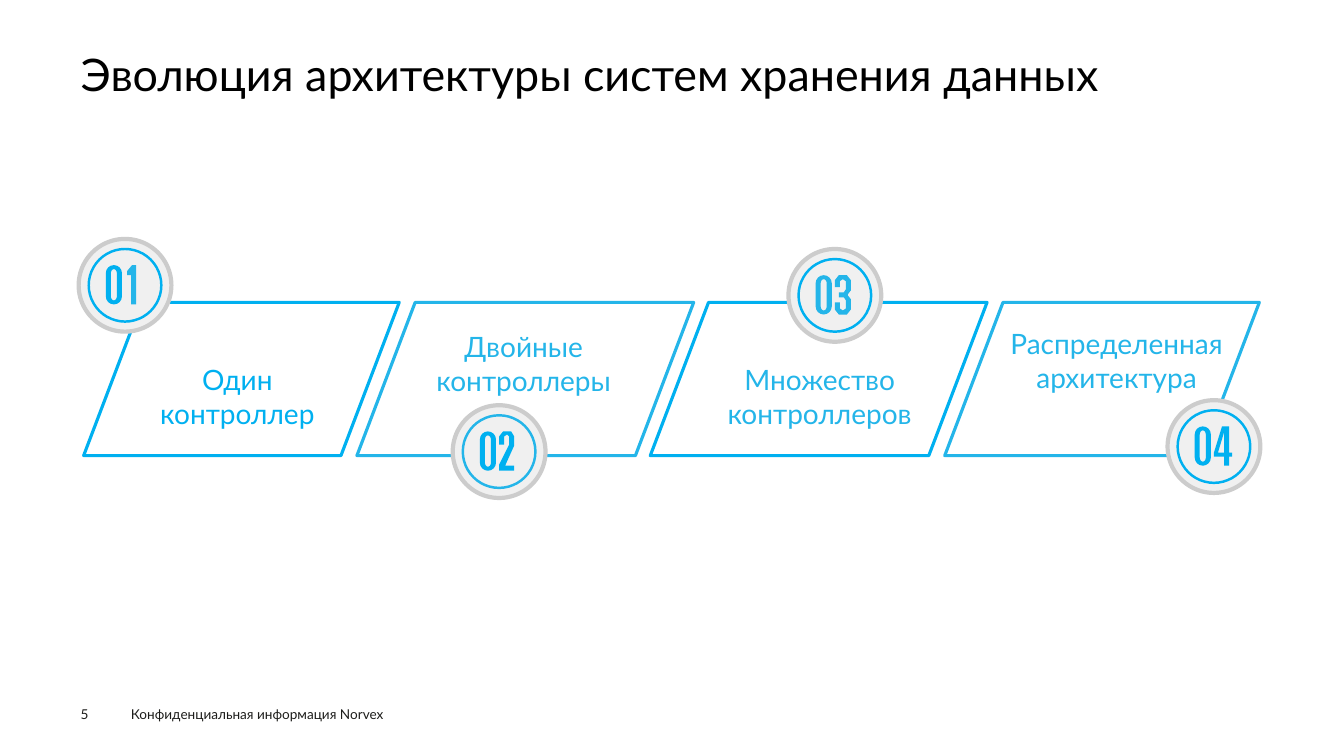
from dataclasses import dataclass
from math import cos, pi, sin
from pptx import Presentation
from pptx.dml.color import RGBColor as RGB
from pptx.enum.shapes import MSO_SHAPE as Kind
from pptx.enum.text import MSO_ANCHOR as Anchor, PP_ALIGN as Align
from pptx.util import Pt

PX = 9144  # EMU in one px, 100 px to the inch
FINE = 20  # steps in one px for digit outlines
TALL = 39  # height of a digit


@dataclass(frozen=True)
class Theme:
    font: str = "Lato"
    blue: str = "00B0F0"
    sky: str = "24B5E9"
    disc: str = "F0F0F0"
    rim: str = "CCCCCC"
    black: str = "000000"
    ink: str = "1D1D1B"
    head: float = 32
    label: float = 20
    foot: float = 9.7


LOOK = Theme()


def pill(inset, width, end, steps=8):
    """Outline of an upright slot with half-ellipse ends, inset from a digit's box."""
    radius = width / 2
    middle = inset[0] + radius
    top = inset[1] + end
    upper = [(middle - radius * cos(pi * n / steps), top - end * sin(pi * n / steps))
             for n in range(steps + 1)]
    return upper + flip(upper)


def flip(points):
    """Mirror points top to bottom, in reverse order."""
    return [(x, TALL - y) for x, y in reversed(points)]


HOOK = [(4, 17), (9, 17), (11, 14), (11, 6), (8, 4), (5, 6), (5, 12),
        (0, 12), (0, 5), (4, 0), (12, 0), (16, 5), (16, 15), (13, 19)]

DIGITS = {
    "0": [pill((0, 0), 16, 8), pill((5, 4), 6, 4)],
    "1": [[(2, 6), (7, 0), (11, 0), (11, TALL), (6, TALL), (6, 10), (2, 10)]],
    "2": [[(0, 13), (0, 5), (4, 0), (12, 0), (15, 5), (15, 14), (6, 34), (15, 34),
           (15, TALL), (0, TALL), (0, 33), (10, 13), (10, 5), (8, 3), (5, 5), (5, 13)]],
    "3": [HOOK + flip(HOOK)],
    "4": [[(8, 0), (15, 0), (15, 26), (18, 26), (18, 30), (15, 30), (15, TALL),
           (10, TALL), (10, 30), (0, 30), (0, 26)],
          [(10, 26), (10, 6), (4, 26)]],
}


def scale(box):
    return [n * PX for n in box]


def write(frame, text, size, color, align=Align.LEFT, anchor=Anchor.TOP,
          pad=(10, 5), lead=None):
    """Fill a text frame; pad is the side and the top inset in px."""
    frame.word_wrap = True
    frame.vertical_anchor = anchor
    frame.margin_left = frame.margin_right = pad[0] * PX
    frame.margin_top = frame.margin_bottom = pad[1] * PX
    para = frame.paragraphs[0]
    para.alignment = align
    para.line_spacing = lead
    run = para.add_run()
    run.text = text
    run.font.name = LOOK.font
    run.font.size = Pt(size)
    run.font.color.rgb = RGB.from_string(color)


def add_text(slide, text, box, **style):
    write(slide.shapes.add_textbox(*scale(box)).text_frame, text, **style)


def paint(shape, fill=None, line=None, width=0):
    shape.shadow.inherit = False
    if fill:
        shape.fill.solid()
        shape.fill.fore_color.rgb = RGB.from_string(fill)
    else:
        shape.fill.background()
    if line:
        shape.line.color.rgb = RGB.from_string(line)
        shape.line.width = Pt(width)
    else:
        shape.line.fill.background()


def add_form(slide, kind, box, **style):
    shape = slide.shapes.add_shape(kind, *scale(box))
    paint(shape, **style)
    return shape


def add_digit(slide, digit, left, top, color):
    first, *holes = [[(x * FINE, y * FINE) for x, y in outline]
                     for outline in DIGITS[digit]]
    pen = slide.shapes.build_freeform(*first[0], scale=PX / FINE)
    pen.add_line_segments(first[1:], close=True)
    for hole in holes:
        pen.move_to(*hole[0])
        pen.add_line_segments(hole[1:], close=True)
    paint(pen.convert_to_shape(left * PX, top * PX), fill=color)


def add_badge(slide, number, left, top, ring, inks):
    add_form(slide, Kind.OVAL, (left, top, 92, 92),
             fill=LOOK.disc, line=LOOK.rim, width=3)
    add_form(slide, Kind.OVAL, (left + 10, top + 10, 72, 72),
             line=ring, width=1.75)
    for place, (digit, ink) in enumerate(zip(number, inks)):
        add_digit(slide, digit, left + 27 + 19 * place, top + 26, ink)


def add_panel(slide, left, width, color):
    panel = add_form(slide, Kind.PARALLELOGRAM, (left, 300, width, 152),
                     line=color, width=2.25)
    panel.adjustments[0] = 0.38


def add_label(slide, text, left, top, width, color):
    add_text(slide, text, (left, top, width, 57), size=LOOK.label,
             color=color, align=Align.CENTER)


def add_title(slide, text, box):
    title = slide.shapes.title
    title.left, title.top, title.width, title.height = scale(box)
    write(title.text_frame, text, LOOK.head, LOOK.black,
          anchor=Anchor.MIDDLE, pad=(0, 0), lead=0.9)


def main():
    blue, sky = LOOK.blue, LOOK.sky
    deck = Presentation()
    deck.slide_width, deck.slide_height = scale((1333, 750))
    slide = deck.slides.add_slide(deck.slide_layouts[5])
    add_text(slide, "Конфиденциальная информация Norvex", (120, 695, 384, 26),
             size=LOOK.foot, color=LOOK.ink)
    add_text(slide, "5", (80, 700, 55, 16),
             size=LOOK.foot, color=LOOK.ink, pad=(0, 0))
    add_title(slide, "Эволюция архитектуры систем хранения данных",
              (80, 49, 1173, 54))

    add_panel(slide, 83, 313, blue)
    add_panel(slide, 354, 334, sky)
    add_panel(slide, 645, 334, blue)
    add_panel(slide, 937, 312, sky)

    add_badge(slide, "01", 78, 237, blue, (blue, sky))
    add_badge(slide, "02", 449, 402, sky, (blue, blue))
    add_badge(slide, "03", 782, 247, blue, (sky, sky))
    add_badge(slide, "04", 1158, 397, blue, (blue, blue))

    add_label(slide, "Один контроллер", 117, 355, 237, blue)
    add_label(slide, "Двойные контроллеры", 401, 322, 237, sky)
    add_label(slide, "Множество контроллеров", 671, 355, 284, sky)
    add_label(slide, "Распределенная архитектура", 980, 319, 255, sky)
    deck.save("out.pptx")


if __name__ == "__main__":
    main()
